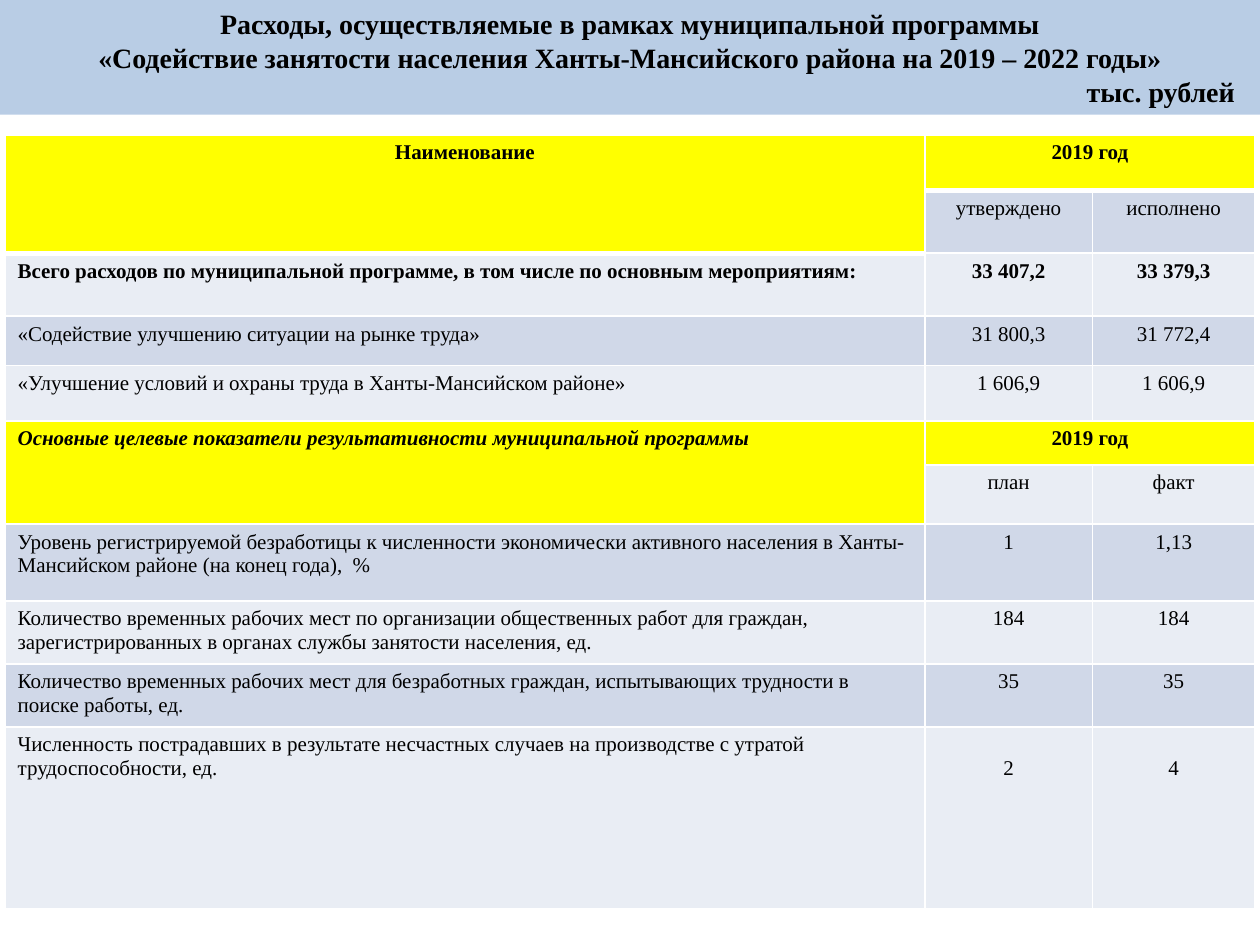
from lxml import etree
from pptx import Presentation
from pptx.dml.color import RGBColor
from pptx.enum.shapes import MSO_SHAPE as Shape
from pptx.enum.text import MSO_ANCHOR as Anchor, PP_ALIGN as Align
from pptx.oxml.ns import qn
from pptx.util import Inches, Pt

YELLOW, BAND_DARK, BAND_LIGHT = "FFFF00", "D0D8E8", "E9EDF4"
FONT = "Times New Roman"


def paint(color_format, hex_color):
    color_format.rgb = RGBColor.from_string(hex_color)


def add_border(cell, side, points):
    """Draw one white cell edge; side is L, R, T or B."""
    line = etree.SubElement(cell._tc.get_or_add_tcPr(), qn("a:ln" + side), w=str(Pt(points)))
    solid = etree.SubElement(line, qn("a:solidFill"))
    etree.SubElement(solid, qn("a:srgbClr"), val="FFFFFF")


deck = Presentation()
deck.slide_width, deck.slide_height = Inches(10), Inches(7.5)
page = deck.slides.add_slide(deck.slide_layouts[6])

# Title band
band = page.shapes.add_shape(Shape.RECTANGLE, 0, 0, Inches(10), Inches(0.91))
band.shadow.inherit = False
band.fill.solid()
paint(band.fill.fore_color, "B9CDE5")
band.line.fill.background()
frame = band.text_frame
frame.word_wrap = True
frame.vertical_anchor = Anchor.MIDDLE
frame.margin_left = frame.margin_right = Inches(0.2)
title_lines = [
    ("Расходы, осуществляемые в рамках муниципальной программы", Align.CENTER),
    ("«Содействие занятости населения Ханты-Мансийского района на 2019 – 2022 годы»", Align.CENTER),
    ("тыс. рублей", Align.RIGHT),
]
for index, (text, align) in enumerate(title_lines):
    para = frame.add_paragraph() if index else frame.paragraphs[0]
    para.text = text
    para.alignment = align
    para.font.name, para.font.size, para.font.bold = FONT, Pt(16), True
    paint(para.font.color, "000000")

# Table: height, three texts; an empty text is covered by a merged cell
rows = [
    (0.44, "Наименование", "2019 год", ""),
    (0.5, "", "утверждено", "исполнено"),
    (0.5, "Всего расходов по муниципальной программе, в том числе по основным мероприятиям:",
     "33 407,2", "33 379,3"),
    (0.39, "«Содействие улучшению ситуации на рынке труда»", "31 800,3", "31 772,4"),
    (0.44, "«Улучшение условий и охраны труда в Ханты-Мансийском районе»", "1 606,9", "1 606,9"),
    (0.35, "Основные целевые показатели результативности муниципальной программы", "2019 год", ""),
    (0.47, "", "план", "факт"),
    (0.61, "Уровень регистрируемой безработицы к численности экономически активного населения "
     "в Ханты-Мансийском районе (на конец года),  %", "1", "1,13"),
    (0.5, "Количество временных рабочих мест по организации общественных работ для граждан, "
     "зарегистрированных в органах службы занятости населения, ед.", "184", "184"),
    (0.5, "Количество временных рабочих мест для безработных граждан, испытывающих трудности "
     "в поиске работы, ед.", "35", "35"),
    (1.44, "Численность пострадавших в результате несчастных случаев на производстве "
     "с утратой трудоспособности, ед.", "2", "4"),
]
header_rows, total_row, last_row = (0, 5), 2, len(rows) - 1
thick_edges = [(0, 1), (0, 2), (1, 0)]

table = page.shapes.add_table(len(rows), 3, Inches(0.04), Inches(1.07), Inches(9.92),
                              Inches(sum(row[0] for row in rows))).table
table.first_row = table.horz_banding = False
for column, width in zip(table.columns, (7.3, 1.33, 1.29)):
    column.width = Inches(width)

for r, (height, *texts) in enumerate(rows):
    table.rows[r].height = Inches(height)
    for c, text in enumerate(texts):
        cell = table.cell(r, c)
        for side in "LRTB":
            thick = (side == "B" and ((r, c) in thick_edges or (r, c) == (0, 0))
                     or side == "T" and (r - 1, c) in thick_edges)
            add_border(cell, side, 3 if thick else 1)
        is_header = r in header_rows or (c == 0 and r - 1 in header_rows)
        cell.fill.solid()
        paint(cell.fill.fore_color, YELLOW if is_header else BAND_DARK if r % 2 else BAND_LIGHT)
        if r == last_row and c:
            cell.margin_top = Inches(0.24)
        para = cell.text_frame.paragraphs[0]
        para.text = text
        para.alignment = Align.CENTER if c or r == 0 else Align.LEFT
        para.font.name, para.font.size = FONT, Pt(12)
        para.font.bold = is_header or r == total_row
        para.font.italic = (r, c) == (5, 0)
        paint(para.font.color, "000000")

for r in header_rows:
    table.cell(r, 0).merge(table.cell(r + 1, 0))
    table.cell(r, 1).merge(table.cell(r, 2))

deck.save("out.pptx")
